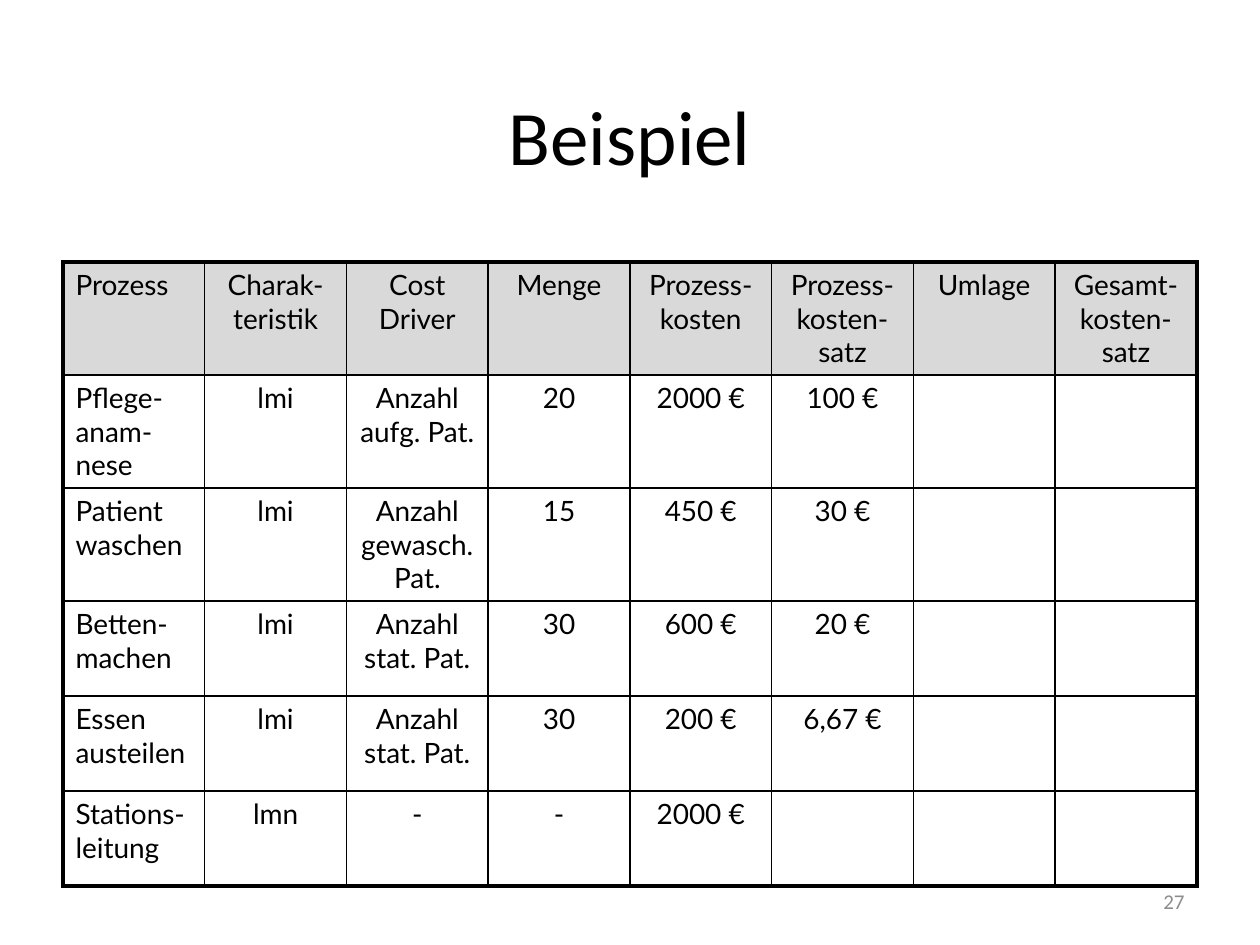
import pptx
import pptx.dml.color
import pptx.enum.text
import pptx.oxml
import pptx.oxml.ns
import pptx.util

TITLE = "Beispiel"
PAGE_NUMBER = "27"
ROWS = [
    ["Prozess", "Charak-teristik", "Cost Driver", "Menge", "Prozess-kosten",
     "Prozess-kosten-satz", "Umlage", "Gesamt-kosten-satz"],
    ["Pflege-anam-nese", "lmi", "Anzahl aufg. Pat.", "20", "2000 €", "100 €", "", ""],
    ["Patient waschen", "lmi", "Anzahl gewasch. Pat.", "15", "450 €", "30 €", "", ""],
    ["Betten-machen", "lmi", "Anzahl stat. Pat.", "30", "600 €", "20 €", "", ""],
    ["Essen austeilen", "lmi", "Anzahl stat. Pat.", "30", "200 €", "6,67 €", "", ""],
    ["Stations-leitung", "lmn", "-", "-", "2000 €", "", "", ""],
]
ROW_HEIGHTS = [113, 113, 113, 95, 95, 95]
COLORS = {"text": "000000", "border": "000000", "header": "D9D9D9", "number": "8C8C8C"}
OUTER, INNER = 2.25, 1
ALIGN = pptx.enum.text.PP_ALIGN
MIDDLE = pptx.enum.text.MSO_ANCHOR.MIDDLE


def px(count):
    return round(count * 914400 / 126)


def color(name):
    return pptx.dml.color.RGBColor.from_string(COLORS[name])


def place(shape, left, top, width, height):
    shape.left, shape.top = px(left), px(top)
    shape.width, shape.height = px(width), px(height)


def write(frame, text, size, font="Calibri", fill="text", align=ALIGN.CENTER):
    para = frame.paragraphs[0]
    para.alignment = align
    span = para.add_run()
    span.text = text
    span.font.size = pptx.util.Pt(size)
    span.font.name = font
    span.font.color.rgb = color(fill)
    return para


def space_before(para, percent):
    """Set spacing before the paragraph as a share of the line height."""
    properties = para._p.get_or_add_pPr()
    properties.insert(0, pptx.oxml.parse_xml(
        f'<a:spcBef {pptx.oxml.ns.nsdecls("a")}>'
        f'<a:spcPct val="{percent * 1000}"/></a:spcBef>'))


def draw_borders(cell, widths):
    """Add borders, given as points for left, right, top and bottom."""
    properties = cell._tc.get_or_add_tcPr()
    for side, width in zip("LRTB", widths):
        properties.append(pptx.oxml.parse_xml(
            f'<a:ln{side} {pptx.oxml.ns.nsdecls("a")} w="{pptx.util.Pt(width)}">'
            f'<a:solidFill><a:srgbClr val="{COLORS["border"]}"/></a:solidFill></a:ln{side}>'))


def add_process_table(page):
    last_row, last_column = len(ROWS) - 1, len(ROWS[0]) - 1
    table = page.shapes.add_table(len(ROWS), len(ROWS[0]), px(63), px(262),
                                  px(1134), px(sum(ROW_HEIGHTS))).table
    table.first_row = table.horz_banding = False
    for row, height in zip(table.rows, ROW_HEIGHTS):
        row.height = px(height)
    for r, texts in enumerate(ROWS):
        for c, text in enumerate(texts):
            cell = table.cell(r, c)
            at_edge = (c == 0, c == last_column, r == 0, r == last_row)
            draw_borders(cell, [OUTER if edge else INNER for edge in at_edge])
            if r == 0:
                cell.fill.solid()
                cell.fill.fore_color.rgb = color("header")
            else:
                cell.fill.background()
            if text:
                para = write(cell.text_frame, text, 16, font="Lato",
                             align=ALIGN.CENTER if c else ALIGN.LEFT)
                space_before(para, 20)


def main():
    deck = pptx.Presentation()
    deck.slide_width, deck.slide_height = px(1260), px(945)
    page = deck.slides.add_slide(deck.slide_layouts[5])

    title = page.shapes.title
    place(title, 63, 40, 1134, 190)
    title.text_frame.vertical_anchor = MIDDLE
    write(title.text_frame, TITLE, 44)

    add_process_table(page)

    box = page.shapes.add_textbox(px(903), px(876), px(294), px(50))
    box.text_frame.word_wrap = True
    box.text_frame.vertical_anchor = MIDDLE
    write(box.text_frame, PAGE_NUMBER, 12, fill="number", align=ALIGN.RIGHT)

    deck.save("out.pptx")


if __name__ == "__main__":
    main()
